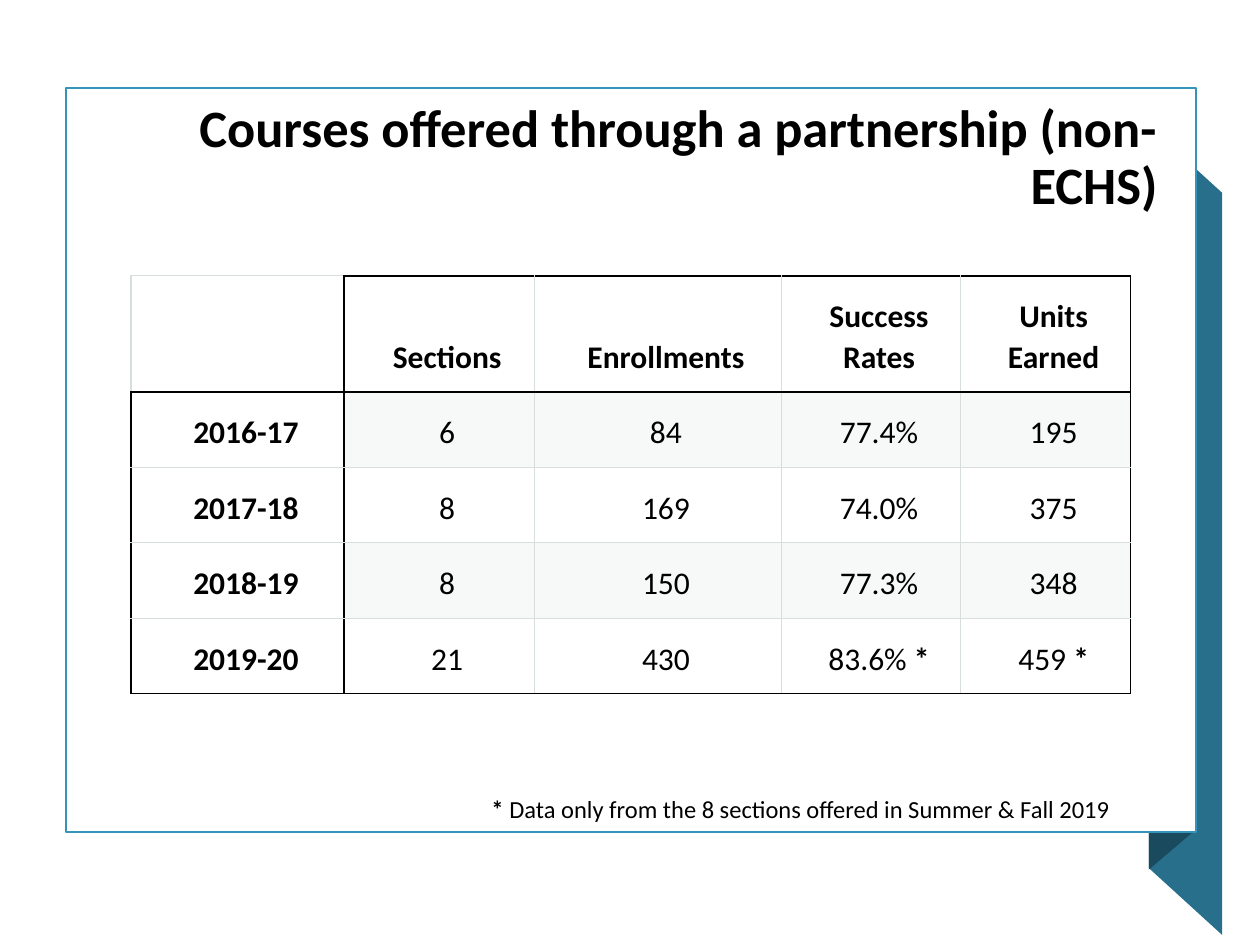
import dataclasses

import lxml.etree
import pptx
import pptx.dml.color
import pptx.enum.shapes
import pptx.enum.text
import pptx.oxml.ns
import pptx.util

Cm = pptx.util.Cm
Pt = pptx.util.Pt
ALIGN = pptx.enum.text.PP_ALIGN
ANCHOR = pptx.enum.text.MSO_ANCHOR


@dataclasses.dataclass(frozen=True)
class Theme:
    font: str = "Calibri"
    ink: str = "000000"
    paper: str = "FFFFFF"
    frame: str = "3494BA"
    ribbon: str = "276F8B"
    ribbon_fold: str = "1A4A5D"
    grid: str = "D8DEDC"
    band_alpha: int = 20
    title_size: int = 30
    table_size: int = 18
    note_size: int = 14


def rgb(colour):
    return pptx.dml.color.RGBColor.from_string(colour)


def add_xml(parent, tag, **attributes):
    return lxml.etree.SubElement(parent, pptx.oxml.ns.qn(tag), attributes)


class SlideBuilder:
    def __init__(self, slide, theme):
        self.slide = slide
        self.theme = theme

    def add_runs(self, frame, runs, size, align, spacing=None):
        """Fill the first paragraph with (text, bold) runs."""
        paragraph = frame.paragraphs[0]
        paragraph.alignment = align
        if spacing:
            paragraph.line_spacing = spacing
        for text, bold in runs:
            run = paragraph.add_run()
            run.text = text
            run.font.name = self.theme.font
            run.font.size = Pt(size)
            run.font.bold = bold
            run.font.color.rgb = rgb(self.theme.ink)

    def polygon(self, points, colour):
        corners = [(Cm(x), Cm(y)) for x, y in points]
        outline = self.slide.shapes.build_freeform(*corners[0])
        outline.add_line_segments(corners[1:], close=True)
        shape = outline.convert_to_shape()
        shape.shadow.inherit = False
        shape.fill.solid()
        shape.fill.fore_color.rgb = rgb(colour)
        shape.line.fill.background()

    def panel(self, left, top, width, height):
        shape = self.slide.shapes.add_shape(
            pptx.enum.shapes.MSO_SHAPE.RECTANGLE, Cm(left), Cm(top), Cm(width), Cm(height))
        shape.shadow.inherit = False
        shape.fill.solid()
        shape.fill.fore_color.rgb = rgb(self.theme.paper)
        shape.line.color.rgb = rgb(self.theme.frame)
        shape.line.width = Pt(1)

    def title(self, text, left, top, width, height):
        title = self.slide.shapes.title
        title.left, title.top, title.width, title.height = map(Cm, (left, top, width, height))
        title.text_frame.vertical_anchor = ANCHOR.MIDDLE
        self.add_runs(title.text_frame, [(text, True)], self.theme.title_size, ALIGN.RIGHT, 0.9)
        # The title must lie in front of the panel.
        self.slide.shapes._spTree.append(title._element)

    def note(self, runs, left, top, width, height):
        box = self.slide.shapes.add_textbox(Cm(left), Cm(top), Cm(width), Cm(height))
        box.text_frame.word_wrap = True
        self.add_runs(box.text_frame, runs, self.theme.note_size, ALIGN.RIGHT)

    def border(self, cell, side, strong):
        """Draw one side (L, R, T or B) in ink if strong, else in the grid colour."""
        line = add_xml(cell._tc.get_or_add_tcPr(), f"a:ln{side}",
                       w=str(Pt(1 if strong else 0.75)))
        fill = add_xml(line, "a:solidFill")
        add_xml(fill, "a:srgbClr", val=self.theme.ink if strong else self.theme.grid)

    def cell_fill(self, cell, banded):
        if not banded:
            cell.fill.background()
            return
        cell.fill.solid()
        cell.fill.fore_color.rgb = rgb(self.theme.grid)
        colour = cell._tc.tcPr.find(pptx.oxml.ns.qn("a:solidFill"))[0]
        add_xml(colour, "a:alpha", val=str(self.theme.band_alpha * 1000))

    def table(self, rows, left, top, widths, heights):
        """Draw a table with a heading row and a heading column."""
        table = self.slide.shapes.add_table(
            len(rows), len(widths), Cm(left), Cm(top),
            Cm(sum(widths)), Cm(sum(heights))).table
        table.first_row = table.horz_banding = False
        for column, width in zip(table.columns, widths):
            column.width = Cm(width)
        for row, height in zip(table.rows, heights):
            row.height = Cm(height)

        def strong(edge, last, across):
            """Ink the heading and outer edges, except around the empty corner."""
            return edge in (1, last) or (edge == 0 and across > 0)

        for r, texts in enumerate(rows):
            for c, text in enumerate(texts):
                cell = table.cell(r, c)
                year_cell = c == 0
                cell.vertical_anchor = ANCHOR.BOTTOM
                cell.margin_left = Cm(0.61)
                cell.margin_right = Cm(0.91 if year_cell else 0.28)
                cell.margin_top = cell.margin_bottom = Cm(0.3)
                for side, edge in (("L", c), ("R", c + 1)):
                    self.border(cell, side, strong(edge, len(widths), r))
                for side, edge in (("T", r), ("B", r + 1)):
                    self.border(cell, side, strong(edge, len(rows), c))
                self.cell_fill(cell, banded=r % 2 == 1 and not year_cell)
                if text:
                    value, star, _ = text.partition("*")
                    runs = [(value, r == 0 or year_cell)]
                    if star:
                        runs.append((star, True))
                    self.add_runs(cell.text_frame, runs, self.theme.table_size,
                                  ALIGN.RIGHT if year_cell else ALIGN.CENTER, 1.07)


def main():
    deck = pptx.Presentation()
    deck.slide_width, deck.slide_height = Cm(25.4), Cm(19.05)
    theme = Theme()
    builder = SlideBuilder(deck.slides.add_slide(deck.slide_layouts[5]), theme)

    builder.polygon([(24.64, 18.85), (23.16, 17.5), (23.16, 2.54), (24.64, 3.89)],
                    theme.ribbon)
    builder.polygon([(24.03, 16.79), (23.16, 17.53), (23.16, 2.54), (24.03, 1.78)],
                    theme.ribbon_fold)
    builder.panel(1.33, 1.78, 22.78, 14.99)
    builder.table(
        [
            ["", "Sections", "Enrollments", "Success Rates", "Units Earned"],
            ["2016-17", "6", "84", "77.4%", "195"],
            ["2017-18", "8", "169", "74.0%", "375"],
            ["2018-19", "8", "150", "77.3%", "348"],
            ["2019-20", "21", "430", "83.6% *", "459 *"],
        ],
        2.64, 5.56, [4.29, 3.84, 4.98, 3.61, 3.43], [2.34] + [1.52] * 4)
    builder.title("Courses offered through a partnership (non-ECHS)", 1.7, 1.37, 21.89, 3.68)
    builder.note([("*", True), (" Data only from the 8 sections offered in Summer & Fall 2019", False)],
                 7.92, 15.88, 14.71, 0.86)
    deck.save("out.pptx")


if __name__ == "__main__":
    main()
